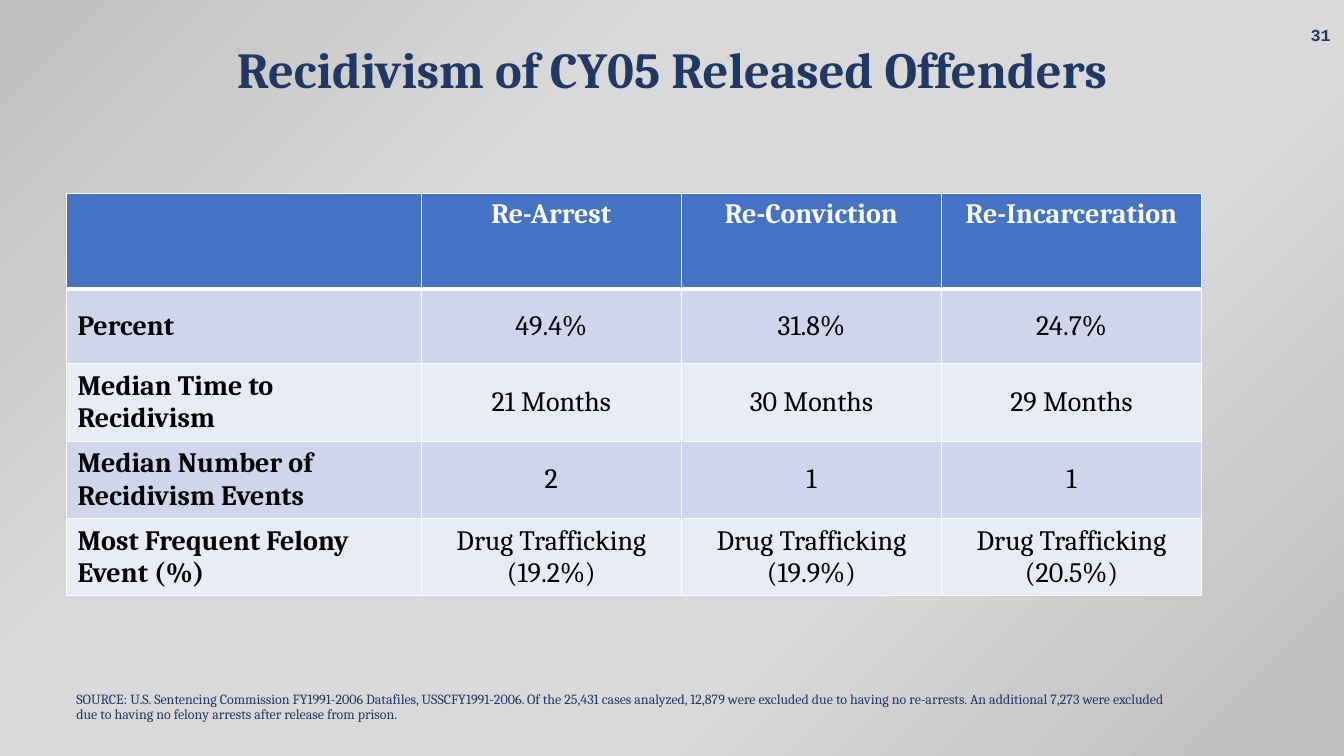
from dataclasses import dataclass

from lxml.etree import SubElement
from pptx import Presentation
from pptx.dml.color import RGBColor
from pptx.enum.text import MSO_ANCHOR, PP_ALIGN
from pptx.oxml import parse_xml
from pptx.oxml.ns import nsdecls, qn
from pptx.util import Pt


@dataclass(frozen=True)
class Theme:
    """Hold the colours, fonts and type sizes of the slide."""
    navy: str = "203864"
    blue: str = "4472C4"
    white: str = "FFFFFF"
    black: str = "000000"
    bands: tuple = ("CFD5EA", "E9EBF5")
    stops: tuple = ((0, "BFBFBF"), (33, "D9D9D9"), (66, "D9D9D9"), (97, "BFBFBF"))
    serif: str = "Cambria"
    mono: str = "Courier New"
    title: int = 36
    cell: int = 20
    page: int = 12
    note: int = 10


THEME = Theme()
ROWS = (
    ("", "Re-Arrest", "Re-Conviction", "Re-Incarceration"),
    ("Percent", "49.4%", "31.8%", "24.7%"),
    ("Median Time to Recidivism", "21 Months", "30 Months", "29 Months"),
    ("Median Number of Recidivism Events", "2", "1", "1"),
    ("Most Frequent Felony Event (%)", "Drug Trafficking (19.2%)",
     "Drug Trafficking (19.9%)", "Drug Trafficking (20.5%)"),
)
NOTE = ("SOURCE: U.S. Sentencing Commission FY1991-2006 Datafiles, USSCFY1991-2006. "
        "Of the 25,431 cases analyzed, 12,879 were excluded due to having no re-arrests. "
        "An additional 7,273 were excluded due to having no felony arrests "
        "after release from prison.")


def paint(slide):
    """Fill the background with a diagonal grey gradient."""
    stops = "".join(f'<a:gs pos="{pos * 1000}"><a:srgbClr val="{tint}"/></a:gs>'
                    for pos, tint in THEME.stops)
    grad = parse_xml(f'<a:gradFill {nsdecls("a")} rotWithShape="1"><a:gsLst>{stops}</a:gsLst>'
                     '<a:lin ang="2700000" scaled="0"/></a:gradFill>')
    fill = slide.background.fill
    fill.solid()
    props = slide.element.find(".//" + qn("p:bgPr"))
    props.replace(props[0], grad)


def write(frame, text, size, tint, bold=False, align=PP_ALIGN.LEFT, face=THEME.serif):
    """Put one styled paragraph into a text frame and return it."""
    frame.word_wrap = True
    frame.text = text
    para = frame.paragraphs[0]
    para.alignment = align
    font = para.font
    font.name, font.size, font.bold = face, Pt(size), bold
    font.color.rgb = RGBColor.from_string(tint)
    return para


def place(shape, left, top, width, height):
    """Move and size a shape, in points."""
    shape.left, shape.top = Pt(left), Pt(top)
    shape.width, shape.height = Pt(width), Pt(height)


def add_title(slide, text):
    """Format the title placeholder."""
    shape = slide.shapes.title
    place(shape, 0, 28.8, 960, 95)
    para = write(shape.text_frame, text, THEME.title, THEME.navy, True, PP_ALIGN.CENTER)
    para.line_spacing = 0.9
    shape.text_frame.vertical_anchor = MSO_ANCHOR.TOP


def add_label(slide, box, anchor, *args, **style):
    """Add a text box and return its paragraph."""
    frame = slide.shapes.add_textbox(*map(Pt, box)).text_frame
    frame.vertical_anchor = anchor
    return write(frame, *args, **style)


def edge(cell, side, width):
    """Draw one white cell border."""
    line = SubElement(cell._tc.get_or_add_tcPr(), qn(f"a:ln{side}"), w=str(Pt(width)))
    fill = SubElement(line, qn("a:solidFill"))
    SubElement(fill, qn("a:srgbClr"), val=THEME.white)


def style_cell(cell, text, row, col):
    """Write and format one table cell."""
    head = row == 0
    tint = THEME.white if head else THEME.black
    align = PP_ALIGN.CENTER if col else PP_ALIGN.LEFT
    write(cell.text_frame, text, THEME.cell, tint, head or col == 0, align)
    cell.vertical_anchor = MSO_ANCHOR.TOP if head else MSO_ANCHOR.MIDDLE
    cell.margin_left = cell.margin_right = Pt(7.9)
    cell.margin_top = cell.margin_bottom = Pt(3.6)
    for side in "LRTB":
        edge(cell, side, 3 if (row, side) in ((0, "B"), (1, "T")) else 1)
    cell.fill.solid()
    shade = THEME.blue if head else THEME.bands[(row - 1) % 2]
    cell.fill.fore_color.rgb = RGBColor.from_string(shade)


def add_grid(slide, rows):
    """Add the table of recidivism figures."""
    frame = slide.shapes.add_table(len(rows), len(rows[0]),
                                   Pt(47.5), Pt(138.2), Pt(810.8), Pt(281.6))
    table = frame.table
    for i, col in enumerate(table.columns):
        col.width = Pt(185.8 if i else 253.4)
    for i, row in enumerate(table.rows):
        row.height = Pt(53.3 if i else 68.4)
        for j, text in enumerate(rows[i]):
            style_cell(table.cell(i, j), text, i, j)


def main():
    """Build and save the slide."""
    deck = Presentation()
    deck.slide_width, deck.slide_height = Pt(960), Pt(540)
    slide = deck.slides.add_slide(deck.slide_layouts[5])
    paint(slide)
    add_label(slide, (741.6, 10.8, 216, 28.8), MSO_ANCHOR.MIDDLE, "31", THEME.page,
              THEME.navy, bold=True, align=PP_ALIGN.RIGHT, face=THEME.mono)
    add_grid(slide, ROWS)
    add_title(slide, "Recidivism of CY05 Released Offenders")
    note = add_label(slide, (47.5, 485.3, 799.2, 34.6), MSO_ANCHOR.BOTTOM,
                     NOTE, THEME.note, THEME.navy)
    note.line_spacing = 0.9
    deck.save("out.pptx")


if __name__ == "__main__":
    main()
